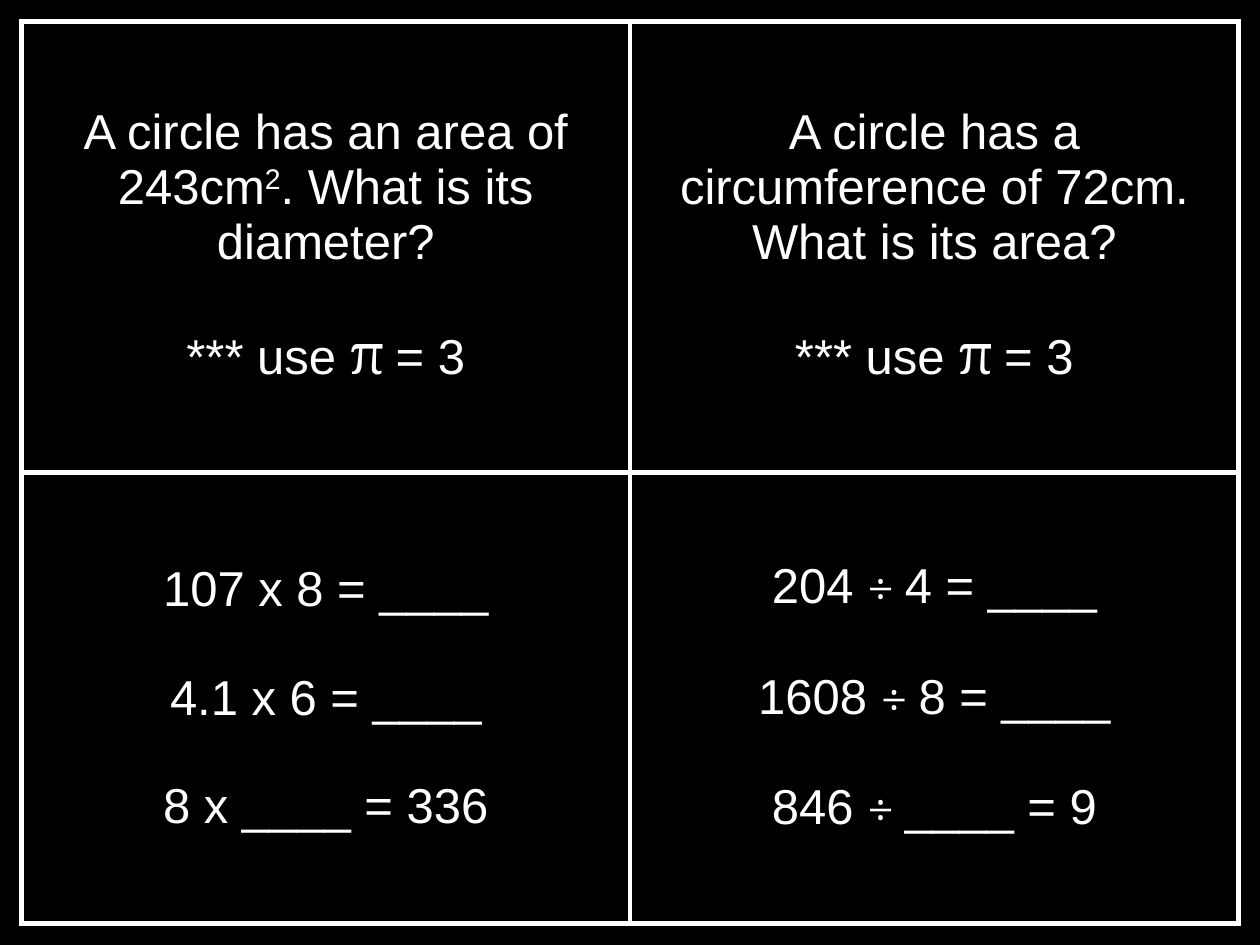
from lxml import etree
from pptx import Presentation
from pptx.dml.color import RGBColor
from pptx.enum.text import MSO_ANCHOR, PP_ALIGN
from pptx.oxml.ns import qn
from pptx.util import Inches, Pt

CENTER = PP_ALIGN.CENTER
MIDDLE = MSO_ANCHOR.MIDDLE
BLACK, WHITE = "000000", "FFFFFF"
MARGIN, COLUMN_WIDTH, ROW_HEIGHT = 0.17, 4.83, 3.58
BORDER_WIDTH = Pt(3)
PARAGRAPH_GAP = Pt(31)
LAST_LINE_INDENT = Inches(-0.22)

STYLES = {
    "text": {"name": "Arial", "size": Pt(28)},
    "symbol": {"name": "Cambria", "size": Pt(28)},
    "pi": {"name": "Cambria", "size": Pt(32)},
}
PI_HINT = [("*** use ", "text"), ("π", "pi"), (" ", "symbol"), ("= 3", "text")]


def rgb(hex_color):
    """Return the colour for a hex string."""
    return RGBColor.from_string(hex_color)


def add_run(paragraph, text, style):
    """Add a white run in the named style and return it."""
    run = paragraph.add_run()
    run.text = text
    for attribute, value in STYLES[style].items():
        setattr(run.font, attribute, value)
    run.font.color.rgb = rgb(WHITE)
    return run


def division(dividend, rest):
    """Return the runs of a division exercise."""
    return [(f"{dividend} ", "text"), ("÷ ", "symbol"), (rest, "text")]


def add_borders(cell):
    """Draw a white line on all four sides of a cell."""
    properties = cell._tc.get_or_add_tcPr()
    for side in ("lnL", "lnR", "lnT", "lnB"):
        line = etree.SubElement(properties, qn(f"a:{side}"), w=str(BORDER_WIDTH))
        fill = etree.SubElement(line, qn("a:solidFill"))
        etree.SubElement(fill, qn("a:srgbClr"), val=WHITE)


def fill_card(cell, paragraphs):
    """Write spaced, centred paragraphs into a bordered cell."""
    add_borders(cell)
    cell.fill.solid()
    cell.fill.fore_color.rgb = rgb(BLACK)
    cell.vertical_anchor = MIDDLE
    frame = cell.text_frame
    for index, runs in enumerate(paragraphs):
        paragraph = frame.add_paragraph() if index else frame.paragraphs[0]
        paragraph.alignment = CENTER
        if index:
            paragraph.space_before = PARAGRAPH_GAP
        for text, style in runs:
            add_run(paragraph, text, style)


def add_card_table(slide, cards):
    """Add the grid of question cards and return its table."""
    row_count, column_count = len(cards), len(cards[0])
    table = slide.shapes.add_table(
        row_count, column_count, Inches(MARGIN), Inches(MARGIN),
        Inches(COLUMN_WIDTH * column_count), Inches(ROW_HEIGHT * row_count),
    ).table
    for flag in ("first_row", "horz_banding"):
        setattr(table, flag, False)
    for row, row_cards in enumerate(cards):
        for column, paragraphs in enumerate(row_cards):
            fill_card(table.cell(row, column), paragraphs)
    return table


def main():
    """Build the slide of four maths question cards."""
    deck = Presentation()
    deck.slide_width, deck.slide_height = Inches(10), Inches(7.5)
    slide = deck.slides.add_slide(deck.slide_layouts[6])
    slide.background.fill.solid()
    slide.background.fill.fore_color.rgb = rgb(BLACK)

    diameter = [[("A circle has an area of 243cm", "text"), ("2", "text"),
                 (". What is its diameter?", "text")], PI_HINT]
    area = [[("A circle has a circumference of 72cm. What is its area?", "text")],
            PI_HINT]
    products = [[(exercise, "text")] for exercise in
                ("107 x 8 = ____", "4.1 x 6 = ____", "8 x ____ = 336")]
    quotients = [division(204, "4 = ____"), division(1608, "8 = ____"),
                 division(846, "____ = 9")]
    table = add_card_table(slide, [[diameter, area], [products, quotients]])

    squared = table.cell(0, 0).text_frame.paragraphs[0].runs[1]
    squared.font._element.set("baseline", "30000")
    last_product = table.cell(1, 0).text_frame.paragraphs[-1]
    last_product._p.get_or_add_pPr().set("indent", str(LAST_LINE_INDENT))
    deck.save("out.pptx")


if __name__ == "__main__":
    main()
